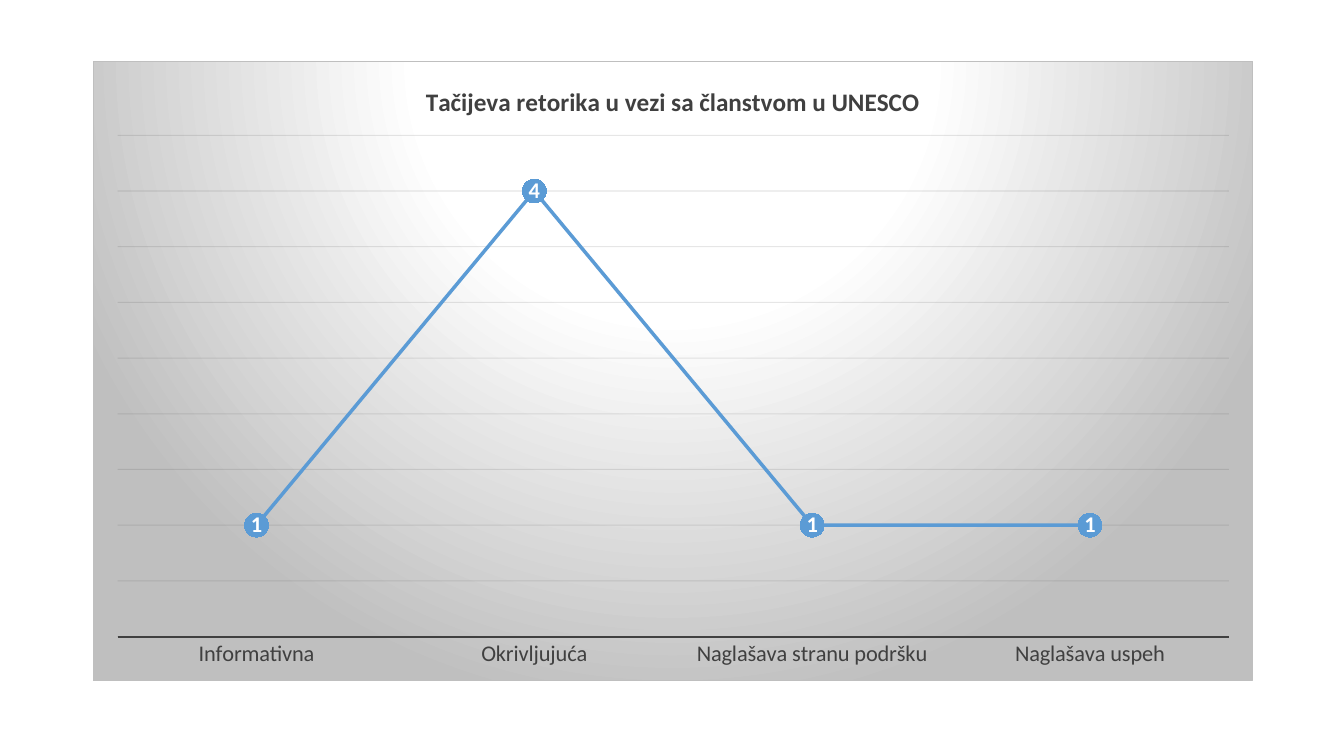
import pptx
import pptx.chart.data
import pptx.dml.color
import pptx.enum.chart
import pptx.oxml
import pptx.oxml.ns
import pptx.util

ENUM = pptx.enum.chart
WIDE, HIGH = 13.33, 7.5
FACE = "Calibri"
HUES = {
    "line": "5B9BD5",
    "text": "404040",
    "grid": "0D0D0D",
    "edge": "BFBFBF",
    "white": "FFFFFF",
}
TITLE = "Tačijeva retorika u vezi sa članstvom u UNESCO"
TONES = {
    "Informativna": 1,
    "Okrivljujuća": 4,
    "Naglašava stranu podršku": 1,
    "Naglašava uspeh": 1,
}
FRAME = {"x": 0.069, "y": 0.081, "cx": 0.863, "cy": 0.82}
PLOT = {"x": 0.021, "y": 0.119, "w": 0.959, "h": 0.81}


def tint(name):
    return pptx.dml.color.RGBColor.from_string(HUES[name])


def apply(item, **form):
    for key, value in form.items():
        setattr(item, key, value)


def style(font, size, hue, bold=False):
    apply(font, name=FACE, size=pptx.util.Pt(size), bold=bold)
    font.color.rgb = tint(hue)


def stroke(line, hue, width):
    line.color.rgb = tint(hue)
    line.width = pptx.util.Pt(width)


def node(body):
    text = body.replace(">", " " + pptx.oxml.ns.nsdecls("c", "a") + ">", 1)
    return pptx.oxml.parse_xml(text)


def place(chart):
    parts = "".join(f'<c:{key}Mode val="edge"/>' for key in "xy")
    sizes = "".join(f'<c:{key} val="{val}"/>' for key, val in PLOT.items())
    area = chart._chartSpace.chart.plotArea
    for old in area.findall(pptx.oxml.ns.qn("c:layout")):
        area.remove(old)
    area.insert(0, node(
        '<c:layout ><c:manualLayout><c:layoutTarget val="inner"/>'
        f"{parts}{sizes}</c:manualLayout></c:layout>"))


def shade(chart):
    stops = "".join(
        f'<a:gs pos="{pos * 1000}"><a:srgbClr val="{HUES[hue]}"/></a:gs>'
        for pos, hue in ((0, "white"), (39, "white"), (100, "edge")))
    root = chart._chartSpace
    root.chart.addnext(node(
        f"<c:spPr ><a:gradFill><a:gsLst>{stops}</a:gsLst>"
        '<a:path path="circle"><a:fillToRect l="50000" t="-80000" '
        'r="50000" b="180000"/></a:path></a:gradFill>'
        f'<a:ln w="9525"><a:solidFill><a:srgbClr val="{HUES["edge"]}"/>'
        "</a:solidFill></a:ln></c:spPr>"))
    root.chart.addprevious(node('<c:roundedCorners val="0"></c:roundedCorners>'))


def head(chart):
    chart.has_title = True
    title = chart.chart_title
    title.include_in_layout = False
    title.text_frame.text = TITLE
    style(title.text_frame.paragraphs[0].runs[0].font, 18, "text", True)


def axes(chart):
    base, side = chart.category_axis, chart.value_axis
    none = ENUM.XL_TICK_MARK.NONE
    apply(base, major_tick_mark=none, minor_tick_mark=none,
          has_major_gridlines=False)
    style(base.tick_labels.font, 16, "text")
    stroke(base.format.line, "text", 1.5)
    apply(side, minimum_scale=0, maximum_scale=4.5, major_unit=0.5,
          has_major_gridlines=True, visible=False)
    grid = side.major_gridlines.format.line
    stroke(grid, "grid", 0.75)
    color = grid._ln.find(".//" + pptx.oxml.ns.qn("a:srgbClr"))
    color.append(node('<a:alpha val="10000"></a:alpha>'))


def trace(chart):
    row = chart.plots[0].series[0]
    row.smooth = False
    stroke(row.format.line, "line", 2.5)
    dot = row.marker
    apply(dot, style=ENUM.XL_MARKER_STYLE.CIRCLE, size=17)
    dot.format.fill.solid()
    dot.format.fill.fore_color.rgb = tint("line")
    dot.format.line.fill.background()
    tags = row.data_labels
    apply(tags, show_value=True, position=ENUM.XL_LABEL_POSITION.CENTER)
    style(tags.font, 16, "white", True)


def graph(slide):
    data = pptx.chart.data.CategoryChartData()
    data.categories = list(TONES)
    data.add_series("Series 1", list(TONES.values()))
    scale = {"x": WIDE, "y": HIGH, "cx": WIDE, "cy": HIGH}
    box = {key: pptx.util.Inches(part * scale[key])
           for key, part in FRAME.items()}
    kind = ENUM.XL_CHART_TYPE.LINE_MARKERS_STACKED
    chart = slide.shapes.add_chart(kind, chart_data=data, **box).chart
    chart.has_legend = False
    chart.plots[0].vary_by_categories = False
    style(chart.font, 16, "text")
    for step in (head, axes, trace, place, shade):
        step(chart)


def main():
    deck = pptx.Presentation()
    apply(deck, slide_width=pptx.util.Inches(WIDE),
          slide_height=pptx.util.Inches(HIGH))
    graph(deck.slides.add_slide(deck.slide_layouts[6]))
    deck.save("out.pptx")


if __name__ == "__main__":
    main()
